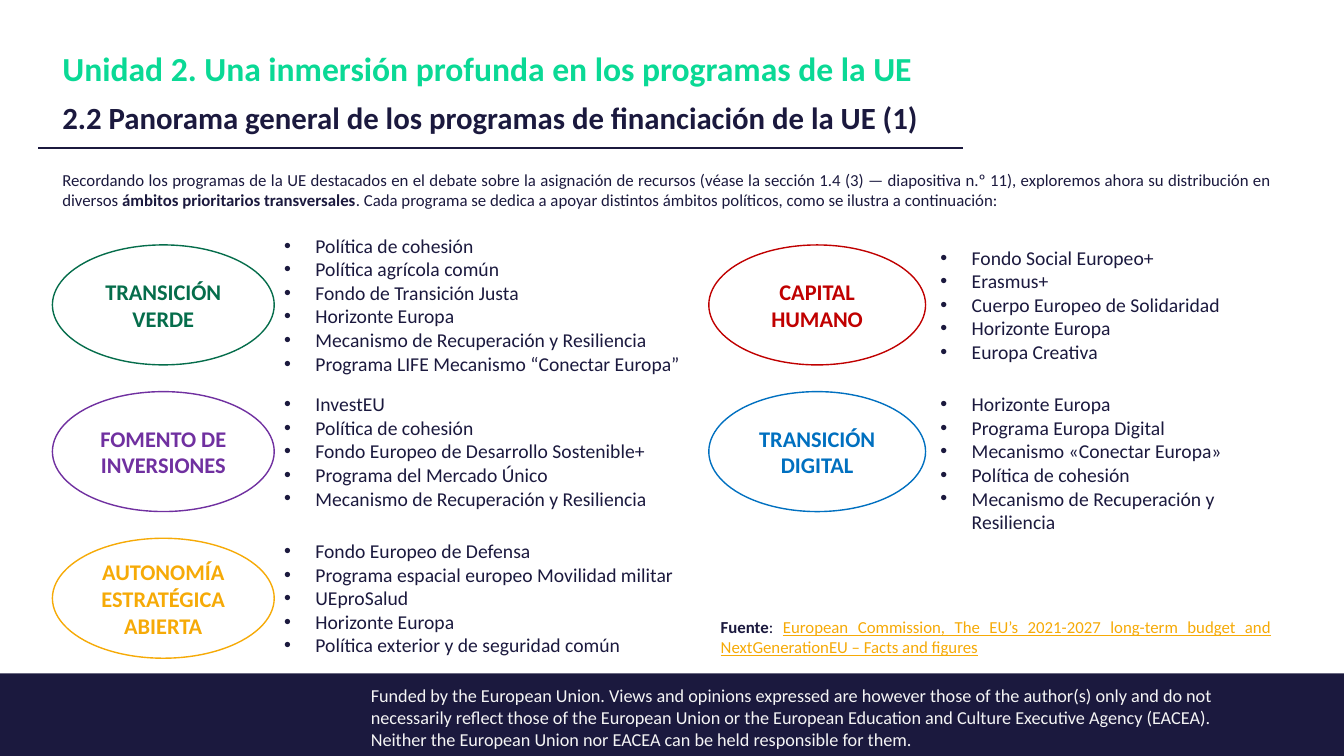
from pptx import Presentation
from pptx.dml.color import RGBColor
from pptx.enum.shapes import MSO_CONNECTOR as CONN, MSO_SHAPE as SHAPE
from pptx.enum.text import MSO_ANCHOR as ANCHOR, PP_ALIGN as ALIGN
from pptx.oxml.ns import qn
from pptx.util import Inches, Pt
from lxml.etree import SubElement

NAVY, GREEN, AMBER, PALE = "1B193E", "0AD995", "F6AA07", "F5F5F5"


def rgb(value):
    return RGBColor.from_string(value)


class Deck:
    """Shared style and element builders for the current slide."""

    font = "Calibri"

    def __init__(self, prs):
        self.s = prs.slides.add_slide(prs.slide_layouts[6])

    def style(self, r, size, color, bold=False, underline=False):
        f = r.font
        f.name, f.size, f.bold, f.underline = self.font, Pt(size), bold, underline
        f.color.rgb = rgb(color)

    def shape(self, kind, x, y, w, h, fill=None, line=None):
        sp = self.s.shapes.add_shape(kind, Inches(x), Inches(y), Inches(w), Inches(h))
        sp.shadow.inherit = False
        if fill:
            sp.fill.solid()
            sp.fill.fore_color.rgb = rgb(fill)
        else:
            sp.fill.background()
        if line:
            sp.line.color.rgb = rgb(line)
            sp.line.width = Pt(1)
        else:
            sp.line.fill.background()
        return sp

    def oval(self, x, y, w, h, label, color):
        tf = self.shape(SHAPE.OVAL, x, y, w, h, line=color).text_frame
        tf.text = label
        tf.word_wrap = True
        tf.vertical_anchor = ANCHOR.MIDDLE
        p = tf.paragraphs[0]
        p.alignment = ALIGN.CENTER
        self.style(p.runs[0], 16, color, bold=True)

    def rule(self, x1, x2, y, color):
        c = self.s.shapes.add_connector(CONN.STRAIGHT, Inches(x1), Inches(y), Inches(x2), Inches(y))
        c.line.color.rgb = rgb(color)
        c.line.width = Pt(1)
        SubElement(c._element.spPr, qn("a:effectLst"))

    def box(self, x, y, w, h):
        tf = self.s.shapes.add_textbox(Inches(x), Inches(y), Inches(w), Inches(h)).text_frame
        tf.word_wrap = True
        return tf

    def text(self, x, y, w, h, runs, size, align=ALIGN.JUSTIFY):
        p = self.box(x, y, w, h).paragraphs[0]
        p.alignment = align
        for words, color, bold, underline in runs:
            r = p.add_run()
            r.text = words
            self.style(r, size, color, bold, underline)

    def title(self, x, y, w, h, lines):
        tf = self.box(x, y, w, h)
        tf.vertical_anchor = ANCHOR.BOTTOM
        tf.text = "\n".join(words for words, _, _ in lines)
        for i, (p, (_, size, color)) in enumerate(zip(tf.paragraphs, lines)):
            p.alignment = ALIGN.JUSTIFY
            p.line_spacing = 0.9
            p.space_before = Pt(10 if i else 0)
            self.style(p.runs[0], size, color, bold=True)

    def bullets(self, x, middle, w, items):
        h = 0.1 + 0.235 * len(items)
        tf = self.box(x, middle - h / 2, w, h)
        tf.text = "\n".join(items)
        for p in tf.paragraphs:
            pPr = p._p.get_or_add_pPr()
            pPr.set("marL", str(Inches(0.31)))
            pPr.set("indent", str(-Inches(0.31)))
            SubElement(pPr, qn("a:buFont"), typeface="Arial")
            SubElement(pPr, qn("a:buChar"), char="•")
            self.style(p.runs[0], 14, NAVY)


COLUMNS = [
    (0.52, 2.2, 2.72, 4.28, [
        ("TRANSICIÓN VERDE", "056D4B", [
            "Política de cohesión", "Política agrícola común", "Fondo de Transición Justa",
            "Horizonte Europa", "Mecanismo de Recuperación y Resiliencia",
            "Programa LIFE Mecanismo “Conectar Europa”"]),
        ("FOMENTO DE INVERSIONES", "7030A0", [
            "InvestEU", "Política de cohesión", "Fondo Europeo de Desarrollo Sostenible+",
            "Programa del Mercado Único", "Mecanismo de Recuperación y Resiliencia"]),
        ("AUTONOMÍA ESTRATÉGICA ABIERTA", AMBER, [
            "Fondo Europeo de Defensa", "Programa espacial europeo Movilidad militar",
            "UEproSalud", "Horizonte Europa", "Política exterior y de seguridad común"]),
    ]),
    (7.03, 2.15, 9.23, 3.1, [
        ("CAPITAL HUMANO", "C00000", [
            "Fondo Social Europeo+", "Erasmus+", "Cuerpo Europeo de Solidaridad",
            "Horizonte Europa", "Europa Creativa"]),
        ("TRANSICIÓN DIGITAL", "0070C0", [
            "Horizonte Europa", "Programa Europa Digital", "Mecanismo «Conectar Europa»",
            "Política de cohesión", "Mecanismo de Recuperación y Resiliencia"]),
    ]),
]


def main():
    prs = Presentation()
    prs.slide_width, prs.slide_height = Inches(13.33), Inches(7.5)
    deck = Deck(prs)

    deck.shape(SHAPE.RECTANGLE, 0, 6.68, 13.33, 0.82, fill=NAVY)
    deck.text(3.58, 6.74, 8.84, 0.76, [
        ("Funded by the European Union. Views and opinions expressed are however those of the "
         "author(s) only and do not necessarily reflect those of the European Union or the "
         "European Education and Culture Executive Agency (EACEA). Neither the European Union "
         "nor EACEA can be held responsible for them.", PALE, False, False)], 13, ALIGN.LEFT)
    deck.rule(0.38, 9.55, 1.47, NAVY)
    deck.title(0.52, 0.5, 9.98, 0.9, [
        ("Unidad 2. Una inmersión profunda en los programas de la UE", 24, GREEN),
        ("2.2 Panorama general de los programas de financiación de la UE (1)", 22, NAVY)])
    deck.text(0.52, 1.63, 12.2, 0.5, [
        ("Recordando los programas de la UE destacados en el debate sobre la asignación de "
         "recursos (véase la sección 1.4 (3) — diapositiva n.º 11), exploremos ahora su "
         "distribución en diversos ", NAVY, False, False),
        ("ámbitos prioritarios transversales", NAVY, True, False),
        (". Cada programa se dedica a apoyar distintos ámbitos políticos, como se ilustra a "
         "continuación:", NAVY, False, False)], 12)

    oval_h, top, pitch = 1.19, 2.43, 1.455
    for oval_x, oval_w, list_x, list_w, areas in COLUMNS:
        for row, (label, color, items) in enumerate(areas):
            y = top + row * pitch
            deck.oval(oval_x, y, oval_w, oval_h, label, color)
            deck.bullets(list_x, y + oval_h / 2, list_w, items)

    deck.text(7.05, 6.07, 5.66, 0.5, [
        ("Fuente", NAVY, True, False),
        (": ", NAVY, False, False),
        ("European Commission, The EU’s 2021-2027 long-term budget and NextGenerationEU – "
         "Facts and figures", AMBER, False, True)], 12)
    prs.save("out.pptx")


if __name__ == "__main__":
    main()
